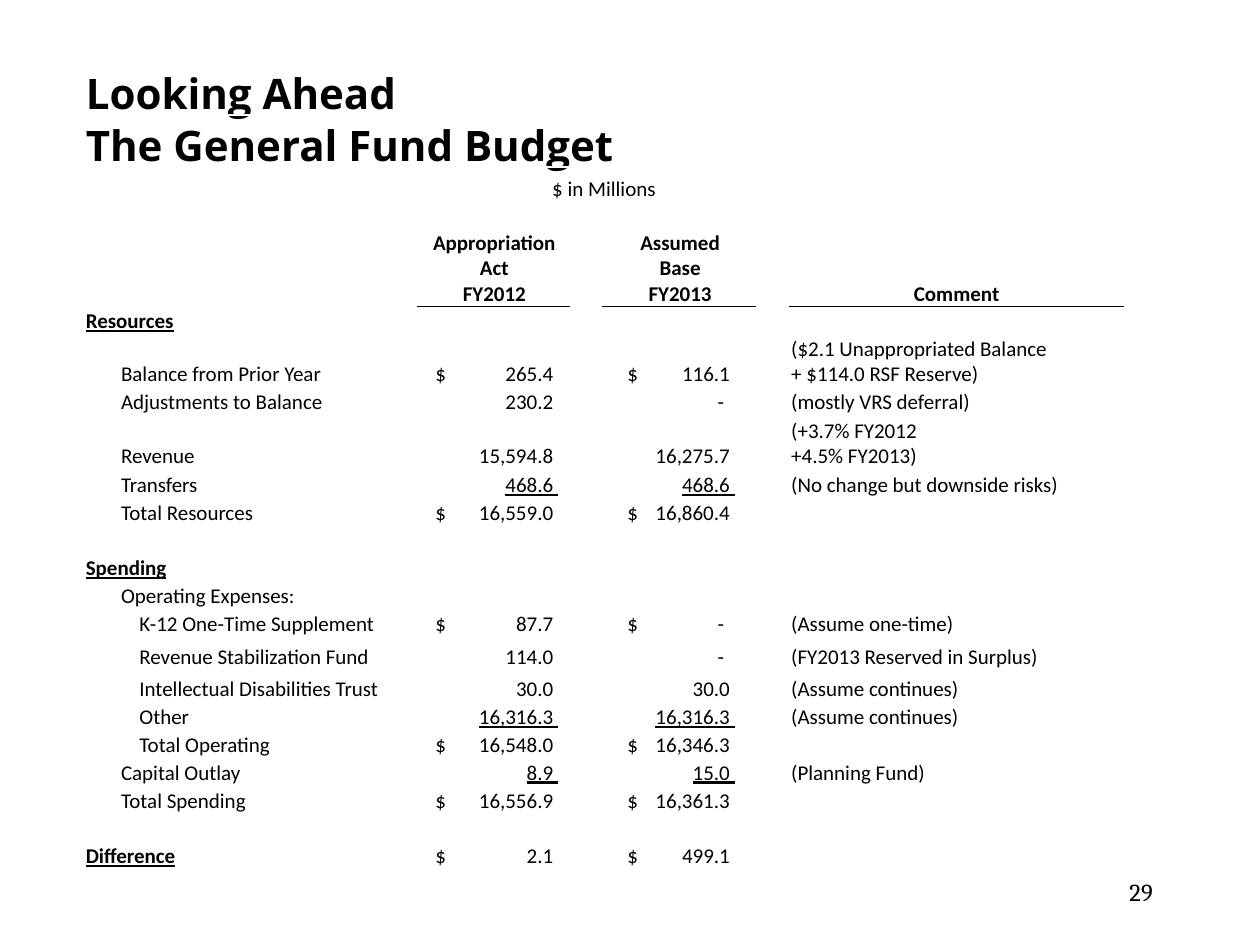
from lxml import etree
from pptx import Presentation
from pptx.dml.color import RGBColor
from pptx.enum.text import MSO_ANCHOR, PP_ALIGN
from pptx.oxml.ns import qn
from pptx.util import Cm, Pt

LEFT, CENTER, RIGHT = PP_ALIGN.LEFT, PP_ALIGN.CENTER, PP_ALIGN.RIGHT
BOTTOM, MIDDLE = MSO_ANCHOR.BOTTOM, MSO_ANCHOR.MIDDLE
BLACK = "000000"

COLUMN_WIDTHS = [0.71, 6.02, 3.07, 0.66, 3.1, 0.66, 6.73]
ROW_HEIGHT = 0.56
SPECIAL_HEIGHTS = {0: 0.64, 1: 0.71, 2: 0.71, 3: 0.53, 4: 1.57, 6: 1.07,
                   8: 1.09, 9: 0.58, 15: 0.66, 16: 0.66}
ROW_COUNT = 23
AMOUNT_COLUMNS = {2: (0.25, 2.57), 4: (0.39, 2.26)}
COMMENT_COLUMN = 6
HEADER_ROW = 4

TITLES = ["Looking Ahead", "The General Fund Budget"]
HEADERS = {2: "Appropriation Act\vFY2012", 4: "Assumed\vBase\vFY2013", 6: "Comment"}
SECTIONS = {5: "Resources", 12: "Spending", 22: "Difference"}
UNDERLINED_ROWS = (9, 17, 19)
INDENTED_ROWS = range(14, 19)
LABELS = {
    6: "Balance from Prior Year", 7: "Adjustments to Balance", 8: "Revenue",
    9: "Transfers", 10: "Total Resources", 13: "Operating Expenses:",
    14: "K-12 One-Time Supplement", 15: "Revenue Stabilization Fund",
    16: "Intellectual Disabilities Trust", 17: "Other", 18: "Total Operating",
    19: "Capital Outlay", 20: "Total Spending",
}
AMOUNTS = {
    6: ("$", "265.4", "116.1"), 7: ("", "230.2", "-"),
    8: ("", "15,594.8", "16,275.7"), 9: ("", "468.6", "468.6"),
    10: ("$", "16,559.0", "16,860.4"), 14: ("$", "87.7", "-"),
    15: ("", "114.0", "-"), 16: ("", "30.0", "30.0"),
    17: ("", "16,316.3", "16,316.3"), 18: ("$", "16,548.0", "16,346.3"),
    19: ("", "8.9", "15.0"), 20: ("$", "16,556.9", "16,361.3"),
    22: ("$", "2.1", "499.1"),
}
COMMENTS = {
    6: "($2.1 Unappropriated Balance\v+ $114.0 RSF Reserve)",
    7: "(mostly VRS deferral)", 8: "(+3.7% FY2012\v+4.5% FY2013)",
    9: "(No change but downside risks)", 14: "(Assume one-time)",
    15: "(FY2013 Reserved in Surplus)", 16: "(Assume continues)",
    17: "(Assume continues)", 19: "(Planning Fund)",
}


def color(hex_string):
    """Return the colour for a hex string."""
    return RGBColor.from_string(hex_string)


def format_runs(paragraph, size=12, name="Calibri", bold=False, underline=False):
    """Set the font of every run in a paragraph."""
    for run in paragraph.runs:
        font = run.font
        font.size, font.name = Pt(size), name
        font.bold, font.underline = bold, underline
        font.color.rgb = color(BLACK)


def write_cell(cell, text, alignment=LEFT, **font):
    """Write formatted text into a table cell."""
    paragraph = cell.text_frame.paragraphs[0]
    paragraph.text = text
    paragraph.alignment = alignment
    format_runs(paragraph, **font)


def write_amount(cell, sign, value, margin, stop, underline):
    """Write an amount aligned on a right tab stop."""
    paragraph = cell.text_frame.paragraphs[0]
    position = stop - 0.12 if value == "-" else stop
    tabs = etree.SubElement(paragraph._p.get_or_add_pPr(), qn("a:tabLst"))
    etree.SubElement(tabs, qn("a:tab"), pos=str(Cm(position)), algn="r")
    cell.margin_left = Cm(margin)
    lead = f" {sign}" if sign else ""
    write_cell(cell, f"{lead}\t{value} ", underline=underline)


def add_border(cell, edge):
    """Draw a thin black line on one edge of a cell."""
    line = etree.Element(qn(f"a:{edge}"), w=str(Pt(0.5)))
    fill = etree.SubElement(line, qn("a:solidFill"))
    etree.SubElement(fill, qn("a:srgbClr"), val=BLACK)
    cell._tc.get_or_add_tcPr().insert(0, line)


def prepare_cell(cell):
    """Clear the fill, tighten the margins and keep empty text small."""
    cell.fill.background()
    cell.margin_left = cell.margin_right = cell.margin_top = Cm(0.03)
    cell.margin_bottom = 0
    cell.vertical_anchor = BOTTOM
    paragraph = cell.text_frame.paragraphs[0]
    etree.SubElement(paragraph._p, qn("a:endParaRPr"), sz="1200")


def add_budget_grid(slide):
    """Add the empty budget table and return it."""
    frame = slide.shapes.add_table(ROW_COUNT, len(COLUMN_WIDTHS), Cm(1.7),
                                   Cm(1.27), Cm(20.95), Cm(16.08))
    table = frame.table
    table.first_row = table.horz_banding = False
    for column, width in zip(table.columns, COLUMN_WIDTHS):
        column.width = Cm(width)
    for index, row in enumerate(table.rows):
        row.height = Cm(SPECIAL_HEIGHTS.get(index, ROW_HEIGHT))
    frame.height = Cm(16.08)
    for cell in table.iter_cells():
        prepare_cell(cell)
    return table


def fill_headings(table):
    """Write the titles, column headers and section names."""
    last_column = len(COLUMN_WIDTHS) - 1
    for row in range(3):
        table.cell(row, 0).merge(table.cell(row, last_column))
    for row, title in enumerate(TITLES):
        write_cell(table.cell(row, 0), title, size=24, name="Open Sans", bold=True)
    write_cell(table.cell(2, 0), "$ in Millions", CENTER)
    for column, header in HEADERS.items():
        write_cell(table.cell(HEADER_ROW, column), header, CENTER, bold=True)
        add_border(table.cell(HEADER_ROW, column), "lnB")
        add_border(table.cell(HEADER_ROW + 1, column), "lnT")
    for row, section in SECTIONS.items():
        table.cell(row, 0).merge(table.cell(row, 1))
        write_cell(table.cell(row, 0), section, bold=True, underline=True)


def fill_entries(table):
    """Write the labels, amounts and comments."""
    for row, label in LABELS.items():
        cell = table.cell(row, 1)
        write_cell(cell, label)
        if row in INDENTED_ROWS:
            cell.margin_left = Cm(0.4)
    for row, (sign, *values) in AMOUNTS.items():
        for (column, (margin, stop)), value in zip(AMOUNT_COLUMNS.items(), values):
            write_amount(table.cell(row, column), sign, value, margin, stop,
                         row in UNDERLINED_ROWS)
    for row, comment in COMMENTS.items():
        write_cell(table.cell(row, COMMENT_COLUMN), comment)


def add_page_number(slide, number):
    """Add the page number at the bottom right."""
    box = slide.shapes.add_textbox(Cm(18.21), Cm(17.35), Cm(5.28), Cm(1.27))
    text_frame = box.text_frame
    text_frame.word_wrap = True
    text_frame.vertical_anchor = MIDDLE
    text_frame.text = number
    paragraph = text_frame.paragraphs[0]
    paragraph.alignment = RIGHT
    format_runs(paragraph, size=14, name="Cambria")


def main():
    """Build the budget slide."""
    presentation = Presentation()
    presentation.slide_width, presentation.slide_height = Cm(25.4), Cm(19.05)
    slide = presentation.slides.add_slide(presentation.slide_layouts[6])
    add_page_number(slide, "29")
    table = add_budget_grid(slide)
    fill_headings(table)
    fill_entries(table)
    presentation.save("out.pptx")


if __name__ == "__main__":
    main()
